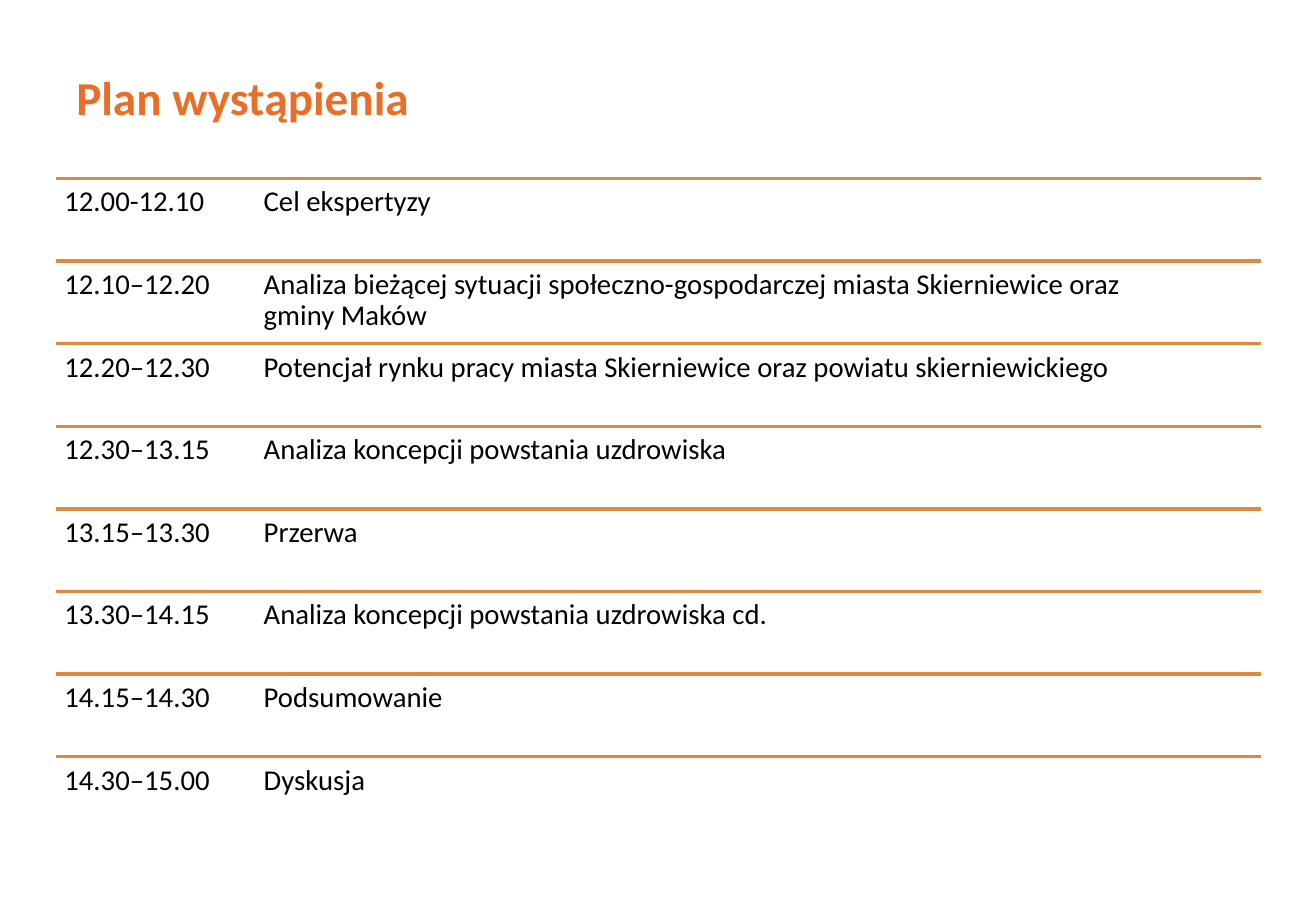
"""Build the agenda slide with its timed list."""
from dataclasses import dataclass

from lxml.etree import SubElement
from pptx import Presentation
from pptx.dml.color import RGBColor
from pptx.enum.shapes import MSO_CONNECTOR
from pptx.enum.text import MSO_ANCHOR
from pptx.oxml.ns import qn
from pptx.slide import Slide
from pptx.text.text import Font, TextFrame
from pptx.util import Inches, Pt

LEFT, TOP, WIDTH, STEP = 0.46, 1.47, 9.92, 0.68
INSET, TAB = 0.07, 1.64


@dataclass
class Item:
    """One entry of the agenda."""
    time: str
    topic: str


ITEMS = [
    Item("12.00-12.10", "Cel ekspertyzy"),
    Item("12.10–12.20", "Analiza bieżącej sytuacji społeczno-gospodarczej "
         "miasta Skierniewice oraz\v\tgminy Maków"),
    Item("12.20–12.30", "Potencjał rynku pracy miasta Skierniewice oraz "
         "powiatu skierniewickiego"),
    Item("12.30–13.15", "Analiza koncepcji powstania uzdrowiska"),
    Item("13.15–13.30", "Przerwa"),
    Item("13.30–14.15", "Analiza koncepcji powstania uzdrowiska cd."),
    Item("14.15–14.30", "Podsumowanie"),
    Item("14.30–15.00", "Dyskusja"),
]


def color(code: str) -> RGBColor:
    """Turn a hex string into a colour."""
    return RGBColor.from_string(code)


def style(font: Font, size: float, code: str, bold: bool = False) -> None:
    """Set the face, size, colour and weight of a font."""
    font.name = "Calibri"
    font.size = Pt(size)
    font.bold = bold
    font.color.rgb = color(code)


def add_box(slide: Slide, left: float, top: float, width: float,
            height: float) -> TextFrame:
    """Add a wrapping text box and return its frame."""
    box = slide.shapes.add_textbox(Inches(left), Inches(top),
                                   Inches(width), Inches(height))
    frame = box.text_frame
    frame.word_wrap = True
    return frame


def add_title(slide: Slide, text: str) -> None:
    """Add the slide title."""
    frame = add_box(slide, 0.53, 0.36, 9.75, 0.87)
    frame.vertical_anchor = MSO_ANCHOR.MIDDLE
    para = frame.paragraphs[0]
    para.text = text
    style(para.font, 28, "E96F28", True)


def add_rule(slide: Slide, top: float) -> None:
    """Add a rule across the agenda."""
    rule = slide.shapes.add_connector(
        MSO_CONNECTOR.STRAIGHT, Inches(LEFT), Inches(top),
        Inches(LEFT + WIDTH), Inches(top))
    rule.line.color.rgb = color("E08840")
    rule.line.width = Pt(2)
    SubElement(rule.element.spPr, qn("a:effectLst"))


def add_item(slide: Slide, item: Item, top: float) -> None:
    """Add an agenda entry under its rule."""
    add_rule(slide, top)
    frame = add_box(slide, LEFT, top, WIDTH, STEP)
    frame.margin_left = frame.margin_right = Inches(INSET)
    frame.margin_top = frame.margin_bottom = Inches(INSET)
    para = frame.paragraphs[0]
    para.text = f"{item.time}\t{item.topic}"
    para.line_spacing = 0.9
    tabs = SubElement(para._p.get_or_add_pPr(), qn("a:tabLst"))
    SubElement(tabs, qn("a:tab"), pos=str(Inches(TAB)), algn="l")
    style(para.font, 17, "000000")


def main() -> None:
    """Build and save the slide."""
    deck = Presentation()
    deck.slide_width = Inches(10.83)
    deck.slide_height = Inches(7.5)
    slide = deck.slides.add_slide(deck.slide_layouts[6])
    add_title(slide, "Plan wystąpienia")
    for row, item in enumerate(ITEMS):
        add_item(slide, item, TOP + row * STEP)
    deck.save("out.pptx")


if __name__ == "__main__":
    main()
